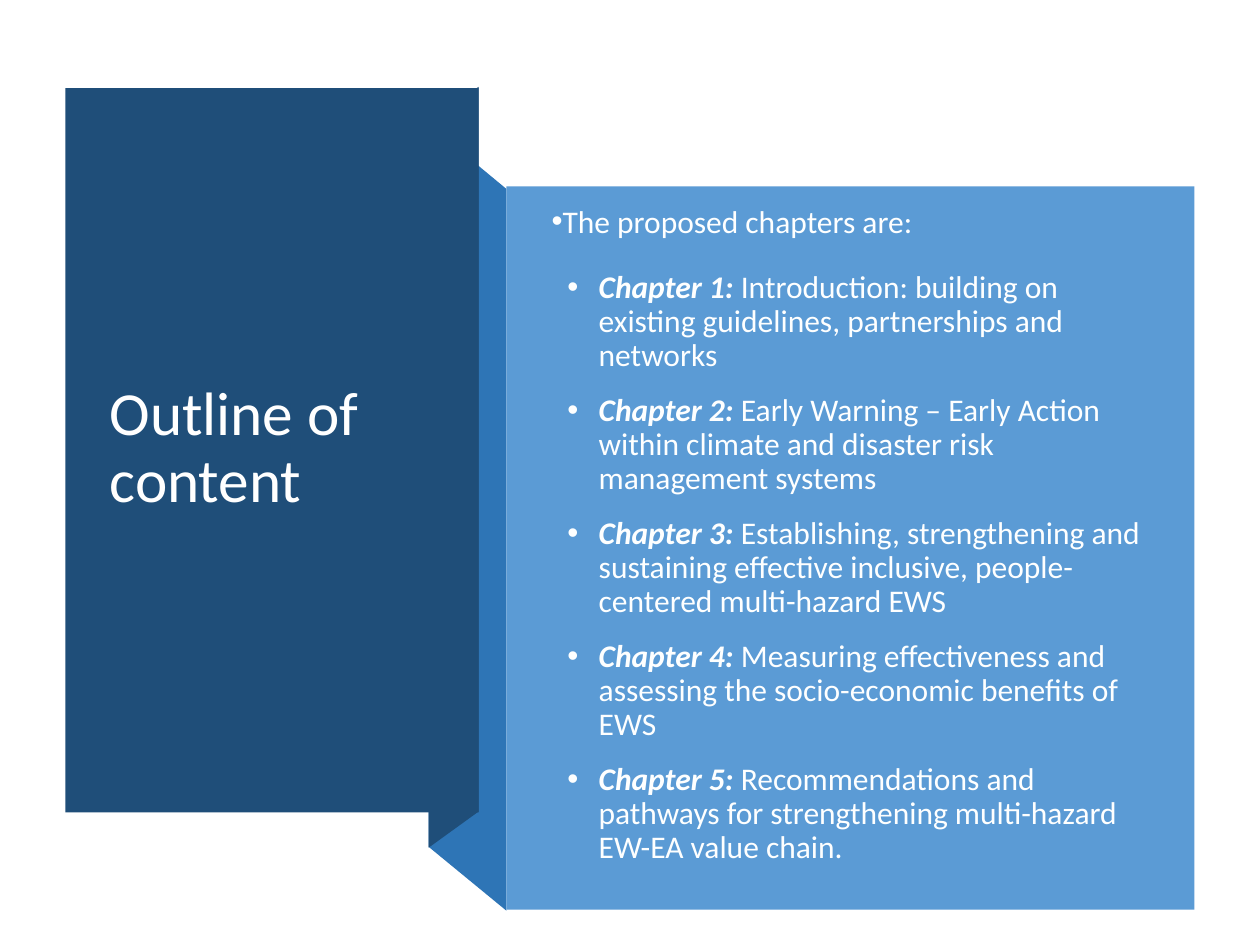
"""Build the outline slide: a folded ribbon with a title and the chapter list."""
from dataclasses import dataclass

from lxml import etree
from pptx import Presentation
from pptx import util as u
from pptx.dml.color import RGBColor
from pptx.enum import shapes, text
from pptx.oxml import ns

TITLE = "Outline of content"
INTRO = "The proposed chapters are:"
CHAPTERS = [
    "Introduction: building on existing guidelines, partnerships and networks",
    "Early Warning – Early Action within climate and disaster risk management systems",
    "Establishing, strengthening and sustaining effective inclusive, people-centered multi-hazard EWS",
    "Measuring effectiveness and assessing the socio-economic benefits of EWS",
    "Recommendations and pathways for strengthening multi-hazard EW-EA value chain.",
]

TITLE_PANEL = (1.32, 1.78, 8.33, 14.6)
TITLE_BOX = (1.96, 2.72, 6.65, 12.67)
LIST_PANEL = (10.21, 3.76, 13.87, 14.58)
LIST_BOX = (10.87, 4.78, 12.4, 12.04)
BACK_FOLD = [(10.21, 18.36), (8.64, 17.07), (8.64, 2.51), (10.21, 3.81)]
FRONT_FOLD = [(9.65, 16.36), (8.64, 17.09), (8.64, 2.49), (9.65, 1.75)]


@dataclass(frozen=True)
class Theme:
    dark: str = "1F4E79"
    middle: str = "2E75B6"
    light: str = "5B9BD5"
    title_color: str = "FFFFFF"
    list_color: str = "FEFFFF"
    font: str = "Calibri"
    title_size: int = 35
    list_size: int = 18
    line_spacing: float = 0.9


THEME = Theme()


def paint(shape, color):
    shape.fill.solid()
    shape.fill.fore_color.rgb = RGBColor.from_string(color)
    shape.line.fill.background()
    shape.shadow.inherit = False


def add_panel(slide, box, color):
    panel = slide.shapes.add_shape(shapes.MSO_SHAPE.RECTANGLE, *map(u.Cm, box))
    paint(panel, color)


def add_fold(slide, points, color):
    start, *others = [(u.Cm(x), u.Cm(y)) for x, y in points]
    builder = slide.shapes.build_freeform(*start)
    builder.add_line_segments(others)
    paint(builder.convert_to_shape(), color)


def add_text_frame(slide, box):
    frame = slide.shapes.add_textbox(*map(u.Cm, box)).text_frame
    frame.word_wrap = True
    frame.vertical_anchor = text.MSO_ANCHOR.MIDDLE
    return frame


def style(paragraph, size, color):
    paragraph.line_spacing = THEME.line_spacing
    paragraph.font.name = THEME.font
    paragraph.font.size = u.Pt(size)
    paragraph.font.color.rgb = RGBColor.from_string(color)


def style_item(paragraph, margin, space_before):
    style(paragraph, THEME.list_size, THEME.list_color)
    paragraph.space_before = u.Pt(space_before)
    properties = paragraph._p.get_or_add_pPr()
    properties.set("marL", str(u.Cm(margin)))
    properties.set("indent", str(u.Cm(-0.63)))
    bullet_font = etree.Element(ns.qn("a:buFont"), typeface="Arial")
    bullet = etree.Element(ns.qn("a:buChar"), char="•")
    defaults = properties.find(ns.qn("a:defRPr"))
    defaults.addprevious(bullet_font)
    defaults.addprevious(bullet)


def add_chapter(frame, number, topic):
    paragraph = frame.add_paragraph()
    label = paragraph.add_run()
    label.text = f"Chapter {number}: "
    label.font.bold = label.font.italic = True
    paragraph.add_run().text = topic
    style_item(paragraph, margin=0.95, space_before=18 if number == 1 else 12)


def main():
    presentation = Presentation()
    presentation.slide_width, presentation.slide_height = u.Cm(25.4), u.Cm(19.05)
    slide = presentation.slides.add_slide(presentation.slide_layouts[6])

    add_fold(slide, BACK_FOLD, THEME.middle)
    add_fold(slide, FRONT_FOLD, THEME.dark)
    add_panel(slide, TITLE_PANEL, THEME.dark)
    title = add_text_frame(slide, TITLE_BOX).paragraphs[0]
    title.text = TITLE
    style(title, THEME.title_size, THEME.title_color)

    add_panel(slide, LIST_PANEL, THEME.light)
    frame = add_text_frame(slide, LIST_BOX)
    intro = frame.paragraphs[0]
    intro.text = INTRO
    style_item(intro, margin=0, space_before=12)
    for number, topic in enumerate(CHAPTERS, start=1):
        add_chapter(frame, number, topic)

    presentation.save("out.pptx")


if __name__ == "__main__":
    main()
